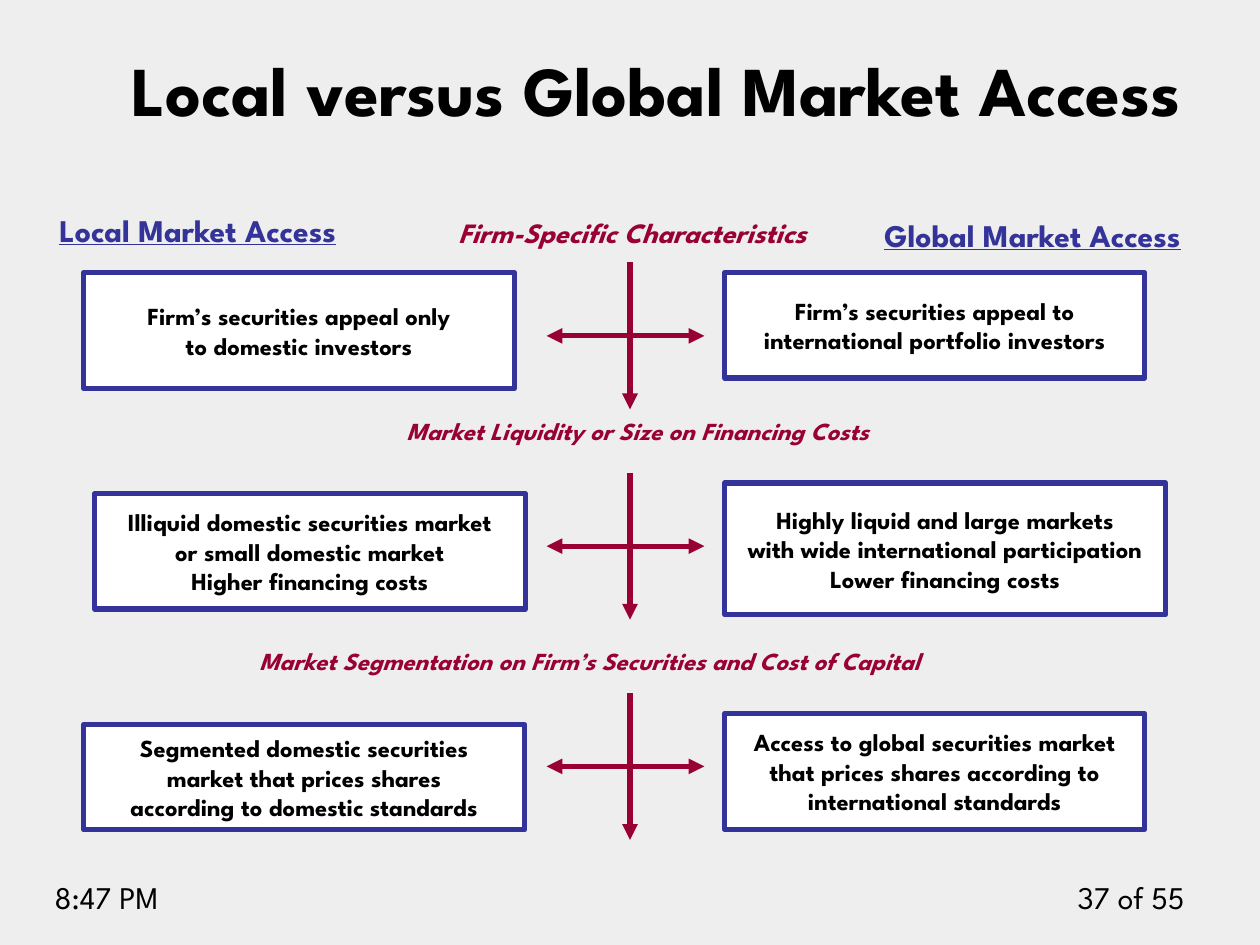
from lxml.etree import SubElement
from pptx import Presentation
from pptx.dml.color import RGBColor
from pptx.enum.shapes import MSO_CONNECTOR, MSO_SHAPE
from pptx.enum.text import MSO_ANCHOR, MSO_AUTO_SIZE, PP_ALIGN
from pptx.oxml.ns import qn
from pptx.util import Cm, Pt

COLORS = {
    "background": "EEEEEE",
    "text": "000000",
    "box": "FFFFFF",
    "local_global": "333399",
    "factor": "990033",
}
FONT = "League Spartan"
CENTER_X = 12.7
ROWS = [
    {
        "top": 5.29,
        "caption": ("Firm-Specific Characteristics", (-3.71, -1.06, 8.38, 0.94), 16),
        "boxes": [
            ("Firm’s securities appeal only\nto domestic investors",
             (-11.01, 0.21, 8.68, 2.33)),
            ("Firm’s securities appeal to\ninternational portfolio investors",
             (1.91, 0.21, 8.47, 2.12)),
        ],
    },
    {
        "top": 9.53,
        "caption": ("Market Liquidity or Size on Financing Costs",
                    (-4.75, -1.27, 10.69, 0.86), 14),
        "boxes": [
            ("Illiquid domestic securities market\nor small domestic market\n"
             "Higher financing costs", (-10.79, 0.42, 8.68, 2.33)),
            ("Highly liquid and large markets\nwith wide international participation\n"
             "Lower financing costs", (1.91, 0.21, 8.89, 2.65)),
        ],
    },
    {
        "top": 13.97,
        "caption": ("Market Segmentation on Firm’s Securities and Cost of Capital",
                    (-7.72, -1.07, 13.84, 0.86), 14),
        "boxes": [
            ("Segmented domestic securities\nmarket that prices shares\n"
             "according to domestic standards", (-11.01, 0.64, 8.89, 2.12)),
            ("Access to global securities market\nthat prices shares according to\n"
             "international standards", (1.91, 0.42, 8.47, 2.33)),
        ],
    },
]


def color(name):
    """Return the named palette colour."""
    return RGBColor.from_string(COLORS[name])


def write(shape, text, size=14, fill="text", bold=True, italic=None, underline=None,
          align=PP_ALIGN.LEFT, anchor=MSO_ANCHOR.TOP, wrap=False,
          fit=MSO_AUTO_SIZE.NONE):
    """Put formatted text into a shape, one paragraph per line."""
    frame = shape.text_frame
    frame.text = text
    frame.word_wrap = wrap
    frame.auto_size = fit
    frame.vertical_anchor = anchor
    for paragraph in frame.paragraphs:
        paragraph.alignment = align
        font = paragraph.font
        font.name, font.size = FONT, Pt(size)
        font.bold, font.italic, font.underline = bold, italic, underline
        font.color.rgb = color(fill)


def add_label(slide, text, box, **style):
    """Add a text box that fits its text."""
    shape = slide.shapes.add_textbox(*map(Cm, box))
    write(shape, text, fit=MSO_AUTO_SIZE.SHAPE_TO_FIT_TEXT, **style)


def add_box(slide, text, box):
    """Add an outlined rectangle with centred text."""
    shape = slide.shapes.add_shape(MSO_SHAPE.RECTANGLE, *map(Cm, box))
    shape.shadow.inherit = False
    shape.fill.solid()
    shape.fill.fore_color.rgb = color("box")
    shape.line.color.rgb = color("local_global")
    shape.line.width = Pt(3)
    write(shape, text, align=PP_ALIGN.CENTER, anchor=MSO_ANCHOR.MIDDLE)


def add_arrow(slide, start_x, start_y, end_x, end_y):
    """Add a straight arrow with its head at the end point."""
    points = map(Cm, (start_x, start_y, end_x, end_y))
    arrow = slide.shapes.add_connector(MSO_CONNECTOR.STRAIGHT, *points)
    arrow.line.color.rgb = color("factor")
    arrow.line.width = Pt(3)
    SubElement(arrow.line._get_or_add_ln(), qn("a:tailEnd"), type="triangle")
    SubElement(arrow._element.spPr, qn("a:effectLst"))


def add_cross(slide, x, top):
    """Add a downward arrow crossed by arrows to the left and right."""
    middle = top + 1.48
    add_arrow(slide, x, top, x, top + 2.96)
    add_arrow(slide, x - 1.24, middle, x + 1.5, middle)
    add_arrow(slide, x - 0.41, middle, x - 1.68, middle)


def add_row(slide, x, top, caption, boxes):
    """Add one factor with its caption, arrows, and local and global boxes."""
    def place(box):
        """Move a box from row to slide coordinates."""
        left, offset, width, height = box
        return x + left, top + offset, width, height

    text, box, size = caption
    add_label(slide, text, place(box), size=size, fill="factor", italic=True)
    add_cross(slide, x, top)
    for text, box in boxes:
        add_box(slide, text, place(box))


def add_title(slide, text, box):
    """Place and format the title placeholder."""
    title = slide.shapes.title
    title.left, title.top, title.width, title.height = map(Cm, box)
    write(title, text, size=40, align=PP_ALIGN.CENTER, anchor=MSO_ANCHOR.BOTTOM, wrap=True)


def add_headings(slide, top):
    """Add the headings of the local and global columns."""
    style = {"size": 18, "fill": "local_global", "underline": True}
    add_label(slide, "Local Market Access", (0.95, top, 7.01, 1.02), **style)
    add_label(slide, "Global Market Access", (17.58, top + 0.1, 7.42, 1.02), **style)


def add_footer(slide, top):
    """Add the time and the page count."""
    style = {"size": 18, "bold": False, "wrap": True}
    add_label(slide, "8:47 PM", (0.85, top, 4.02, 1.02), **style)
    add_label(slide, "37 of 55", (21.17, top, 2.96, 1.02), align=PP_ALIGN.RIGHT, **style)


def main():
    """Build and save the presentation."""
    presentation = Presentation()
    presentation.slide_width, presentation.slide_height = Cm(25.4), Cm(19.05)
    slide = presentation.slides.add_slide(presentation.slide_layouts[5])
    slide.background.fill.solid()
    slide.background.fill.fore_color.rgb = color("background")
    add_title(slide, "Local versus Global Market Access", (0, -0.42, 26.46, 3.18))
    add_headings(slide, 4.13)
    for row in ROWS:
        add_row(slide, CENTER_X, **row)
    add_footer(slide, 17.57)
    presentation.save("out.pptx")


if __name__ == "__main__":
    main()
